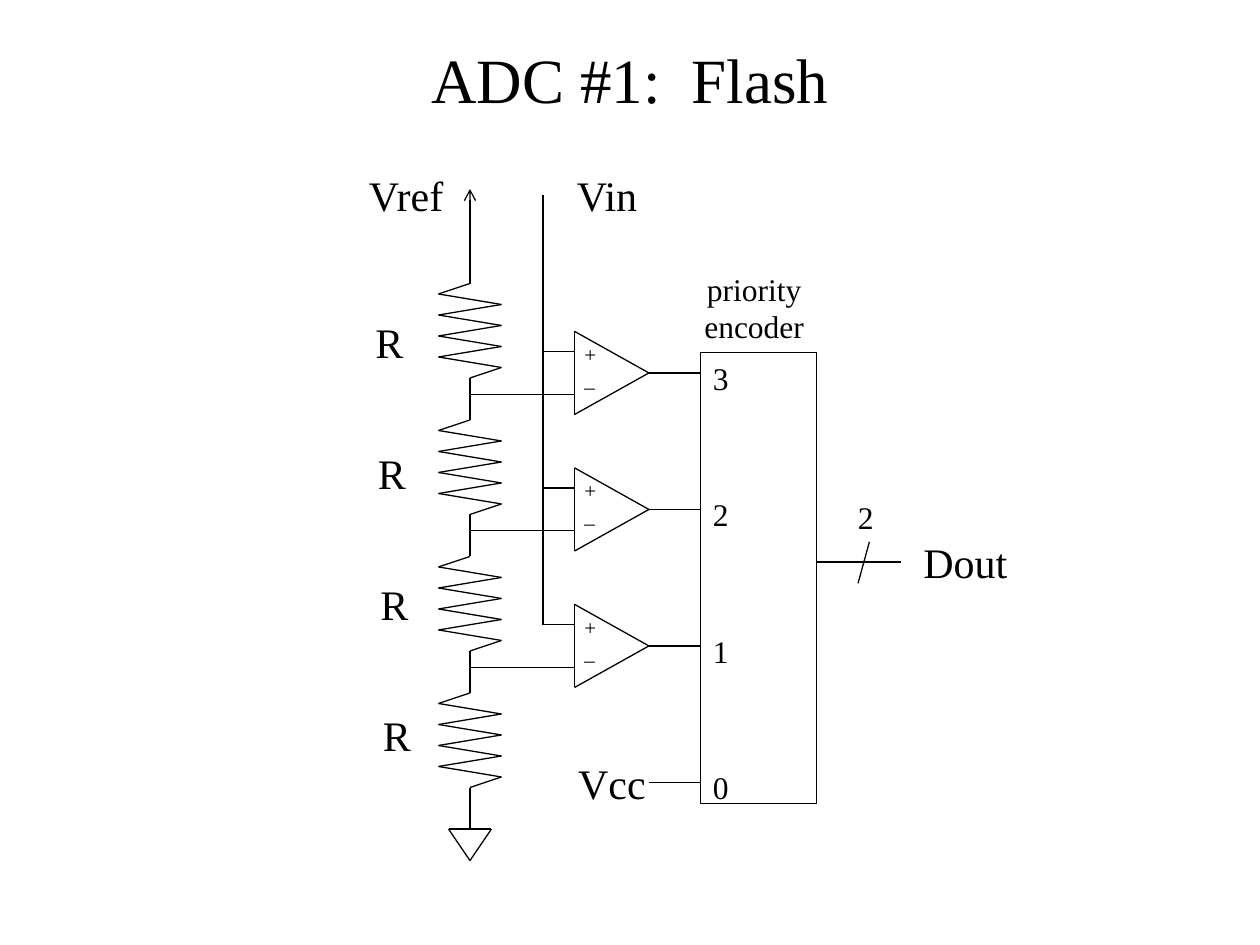
from itertools import pairwise

from lxml.etree import SubElement
from pptx import Presentation
from pptx.dml.color import RGBColor
from pptx.enum.shapes import MSO_CONNECTOR as Connector, MSO_SHAPE as Shape
from pptx.enum.text import MSO_ANCHOR as Anchor, MSO_AUTO_SIZE as AutoSize, PP_ALIGN as Align
from pptx.oxml.ns import qn
from pptx.util import Inches, Pt

COLORS = {"ink": "000000", "paper": "FFFFFF"}
PITCH = 13 / 12
STEP = 1 / 12
LADDER_X, INPUT_X, COMPARATOR_X, OUTPUT_X, ENCODER_X = 3.73, 4.31, 4.56, 5.15, 5.56
LADDER_TOP, LADDER_BOTTOM = 2.25, 6.58


class Schematic:
    font = "Times New Roman"
    line_width = Pt(0.75)

    def __init__(self, deck):
        self.page = deck.slides.add_slide(deck.slide_layouts[5])
        fill = self.page.background.fill
        fill.solid()
        fill.fore_color.rgb = RGBColor.from_string(COLORS["paper"])

    def fill_text(self, frame, lines, size, align):
        frame.text = "\n".join(lines)
        for para in frame.paragraphs:
            para.alignment = align
            for span in para.runs:
                for name, value in {"name": self.font, "size": Pt(size)}.items():
                    setattr(span.font, name, value)
                span.font.color.rgb = RGBColor.from_string(COLORS["ink"])

    def title(self, text):
        box = self.page.shapes.title
        place = {"left": 0.75, "top": 0, "width": 8.5, "height": 1.25}
        for name, value in place.items():
            setattr(box, name, Inches(value))
        box.text_frame.vertical_anchor = Anchor.MIDDLE
        self.fill_text(box.text_frame, [text], 36, Align.CENTER)

    def label(self, left, top, width, height, lines, size, align=Align.LEFT):
        box = self.page.shapes.add_textbox(*map(Inches, (left, top, width, height)))
        self.fill_text(box.text_frame, lines, size, align)
        for name, value in {"word_wrap": False, "auto_size": AutoSize.SHAPE_TO_FIT_TEXT}.items():
            setattr(box.text_frame, name, value)

    def stroke(self, line):
        line.width = self.line_width
        line.color.rgb = RGBColor.from_string(COLORS["ink"])

    def wire(self, start, end, shapes=None, arrow=False):
        shapes = self.page.shapes if shapes is None else shapes
        wire = shapes.add_connector(Connector.STRAIGHT, *map(Inches, (*start, *end)))
        self.stroke(wire.line)
        properties = wire._element.spPr
        if arrow:
            SubElement(properties.find(qn("a:ln")), qn("a:tailEnd"), type="arrow")
        SubElement(properties, qn("a:effectLst"))

    def outline(self, points):
        group = self.page.shapes.add_group_shape()
        for start, end in pairwise(points):
            self.wire(start, end, group.shapes)

    def resistor(self, top):
        bends = [(LADDER_X + (0.25 if i % 2 == 0 else -0.25), top + i * STEP) for i in range(1, 9)]
        bottom = top + 9 * STEP
        self.outline([(LADDER_X, top), *bends, (LADDER_X, bottom)])
        self.wire((LADDER_X, bottom), (LADDER_X, top + 13 * STEP))

    def ground(self, top):
        left, right = (LADDER_X - 0.17, top), (LADDER_X + 0.17, top)
        self.outline([left, right, (LADDER_X, top + 0.25), left])

    def comparator(self, middle):
        top, bottom = (COMPARATOR_X, middle - 0.33), (COMPARATOR_X, middle + 0.33)
        tip = (OUTPUT_X, middle)
        self.outline([top, bottom, tip, top])
        self.wire((INPUT_X, middle - 0.17), (COMPARATOR_X, middle - 0.17))
        self.wire((LADDER_X, middle + 0.17), (COMPARATOR_X, middle + 0.17))
        self.label(4.54, middle - 0.3, 0.3, 0.5, ["+", "_"], 12)

    def encoder(self, left, top, width, height):
        box = self.page.shapes.add_shape(Shape.RECTANGLE, *map(Inches, (left, top, width, height)))
        box.shadow.inherit = False
        box.fill.background()
        self.stroke(box.line)


def main():
    deck = Presentation()
    deck.slide_width, deck.slide_height = Inches(10), Inches(7.5)
    schematic = Schematic(deck)
    schematic.title("ADC #1:  Flash")

    schematic.wire((LADDER_X, LADDER_TOP), (LADDER_X, 1.5), arrow=True)
    for i in range(4):
        schematic.resistor(LADDER_TOP + i * PITCH)
        schematic.label(2.88 + i * 0.02, 2.46 + i * 1.04, 0.42, 0.5, ["R"], 24)
    schematic.ground(LADDER_BOTTOM)

    schematic.wire((INPUT_X, 1.55), (INPUT_X, 4.96))
    schematic.encoder(ENCODER_X, 2.8, 0.92, 3.58)
    for i, code in enumerate("3210"):
        middle = 2.96 + i * PITCH
        if code != "0":
            schematic.comparator(middle)
        schematic.wire((OUTPUT_X, middle), (ENCODER_X, middle))
        schematic.label(ENCODER_X, middle - 0.16, 0.33, 0.4, [code], 18)

    schematic.wire((6.48, 4.46), (7.15, 4.46))
    schematic.wire((6.9, 4.3), (6.81, 4.63))
    schematic.label(6.71, 3.9, 0.33, 0.4, ["2"], 18)
    schematic.label(5.49, 2.09, 0.99, 0.7, ["priority", "encoder"], 18, Align.CENTER)
    for text, left, top, width in (
        ("Vref", 2.83, 1.3, 0.81),
        ("Vin", 4.48, 1.3, 0.7),
        ("Vcc", 4.49, 5.96, 0.74),
        ("Dout", 7.23, 4.21, 0.87),
    ):
        schematic.label(left, top, width, 0.5, [text], 24)
    deck.save("out.pptx")


if __name__ == "__main__":
    main()
